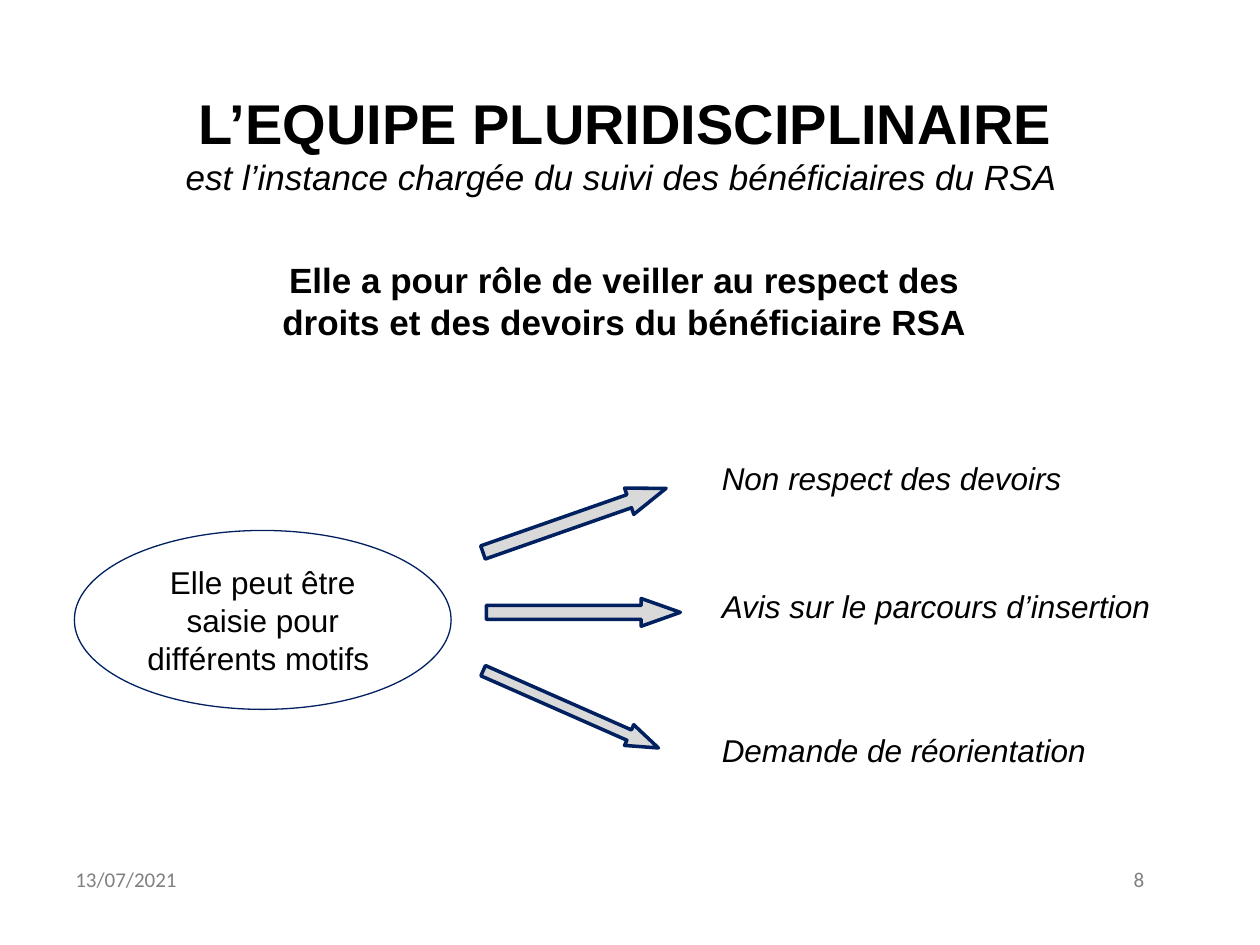
import pptx
import pptx.dml.color
import pptx.enum.shapes
import pptx.enum.text
import pptx.oxml.ns
import pptx.util
from lxml import etree

Pt = pptx.util.Pt
Kind = pptx.enum.shapes.MSO_SHAPE
Align = pptx.enum.text.PP_ALIGN
Anchor = pptx.enum.text.MSO_ANCHOR
CELL = pptx.util.Inches(0.1)
NAVY, GREY, BLACK, DIM = "002060", "D9D9D9", "000000", "808080"


def paint(part, tint):
    """Give a font colour or a fill colour its hex value."""
    part.rgb = pptx.dml.color.RGBColor.from_string(tint)


def cells(box):
    """Turn a box in grid cells into slide lengths."""
    return [round(side * CELL) for side in box]


def write(shape, lines, align=Align.LEFT, anchor=Anchor.TOP, top=0.05):
    """Fill a shape with (text, format) lines."""
    frame = shape.text_frame
    looks = {"word_wrap": True, "auto_size": pptx.enum.text.MSO_AUTO_SIZE.NONE,
             "vertical_anchor": anchor, "margin_top": pptx.util.Inches(top)}
    for name, value in looks.items():
        setattr(frame, name, value)
    for index, (text, style) in enumerate(lines):
        para = frame.add_paragraph() if index else frame.paragraphs[0]
        para.alignment = align
        para.space_before = Pt(0)
        run = para.add_run()
        run.text = text
        base = {"name": "Arial", "size": Pt(18), "bold": False, "italic": False}
        for name, value in (base | style).items():
            if name == "tint":
                continue
            setattr(run.font, name, value)
        paint(run.font.color, style.get("tint", BLACK))


def label(slide, box, text, style, align=Align.LEFT):
    """Add a text box with one line."""
    write(slide.shapes.add_textbox(*cells(box)), [(text, style)], align)


def draw(slide, kind, box, width, fill=None):
    """Add a preset shape with a navy outline."""
    shape = slide.shapes.add_shape(kind, *cells(box))
    shape.shadow.inherit = False
    if fill:
        shape.fill.solid()
        paint(shape.fill.fore_color, fill)
    else:
        shape.fill.background()
    paint(shape.line.color, NAVY)
    shape.line.width = Pt(width)
    return shape


def seat(holder, box):
    """Move a placeholder to a box."""
    for name, value in zip(("left", "top", "width", "height"), cells(box)):
        setattr(holder, name, value)


def head(slide, box):
    """Place the title and its subtitle."""
    seat(slide.shapes.title, box)
    write(slide.shapes.title, [
        ("L’EQUIPE PLURIDISCIPLINAIRE", {"size": Pt(32), "bold": True}),
        ("est l’instance chargée du suivi des bénéficiaires du RSA ",
         {"size": Pt(20), "italic": True})], Align.CENTER, top=0.08)


def role(slide, box):
    """Place the team's role in the body, with no bullet."""
    body = slide.placeholders[1]
    seat(body, box)
    props = body.text_frame.paragraphs[0]._p.get_or_add_pPr()
    for name in ("marL", "indent"):
        props.set(name, "0")
    etree.SubElement(props, pptx.oxml.ns.qn("a:buNone"))
    text = ("Elle a pour rôle de veiller au respect des droits "
            "et des devoirs du bénéficiaire RSA")
    write(body, [(text, {"size": Pt(20), "bold": True})], Align.CENTER)


def motifs(slide, box):
    """Place the oval, and an arrow to each motive."""
    left, top, width, _ = box
    oval = draw(slide, Kind.OVAL, (left, top + 6.2, 29.9, 14.2), 0.75)
    write(oval, [("Elle peut être saisie pour différents motifs ", {})],
          Align.CENTER, Anchor.MIDDLE)
    start = 50.4
    rows = [
        ("Non respect des devoirs", 0, (32, 4.3, 15.4, 2.2), 340.7),
        ("Avis sur le parcours d’insertion", 10.2, (32.7, 11.6, 15.4, 2.2), 0),
        ("Demande de réorientation", 21.6, (31.8, 19.5, 15.2, 1.8), 23.8)]
    for text, drop, (x, y, wide, high), turn in rows:
        arrow = draw(slide, Kind.RIGHT_ARROW,
                     (left + x, top + y, wide, high), 2, GREY)
        arrow.adjustments[0], arrow.adjustments[1] = 0.5, 1.41
        arrow.rotation = turn
        label(slide, (left + start, top + drop, width - start, 4),
              text, {"italic": True})


def foot(slide, box):
    """Place the date and the page number."""
    left, top, width, high = box
    style = {"name": "Calibri", "size": Pt(12), "tint": DIM}
    label(slide, (left, top, 23.3, high), "13/07/2021", style)
    label(slide, (left + width - 20.1, top, 20.1, high), "8", style, Align.RIGHT)


def main():
    """Build the slide and save it."""
    deck = pptx.Presentation()
    deck.slide_width, deck.slide_height = cells((100, 75))
    slide = deck.slides.add_slide(deck.slide_layouts[1])
    head(slide, (7.5, 6.2, 84.3, 16.5))
    role(slide, (21.2, 20, 56.7, 7.7))
    motifs(slide, (5.9, 35.9, 88.2, 25.6))
    foot(slide, (5, 68.3, 86.8, 5.2))
    deck.save("out.pptx")


if __name__ == "__main__":
    main()
